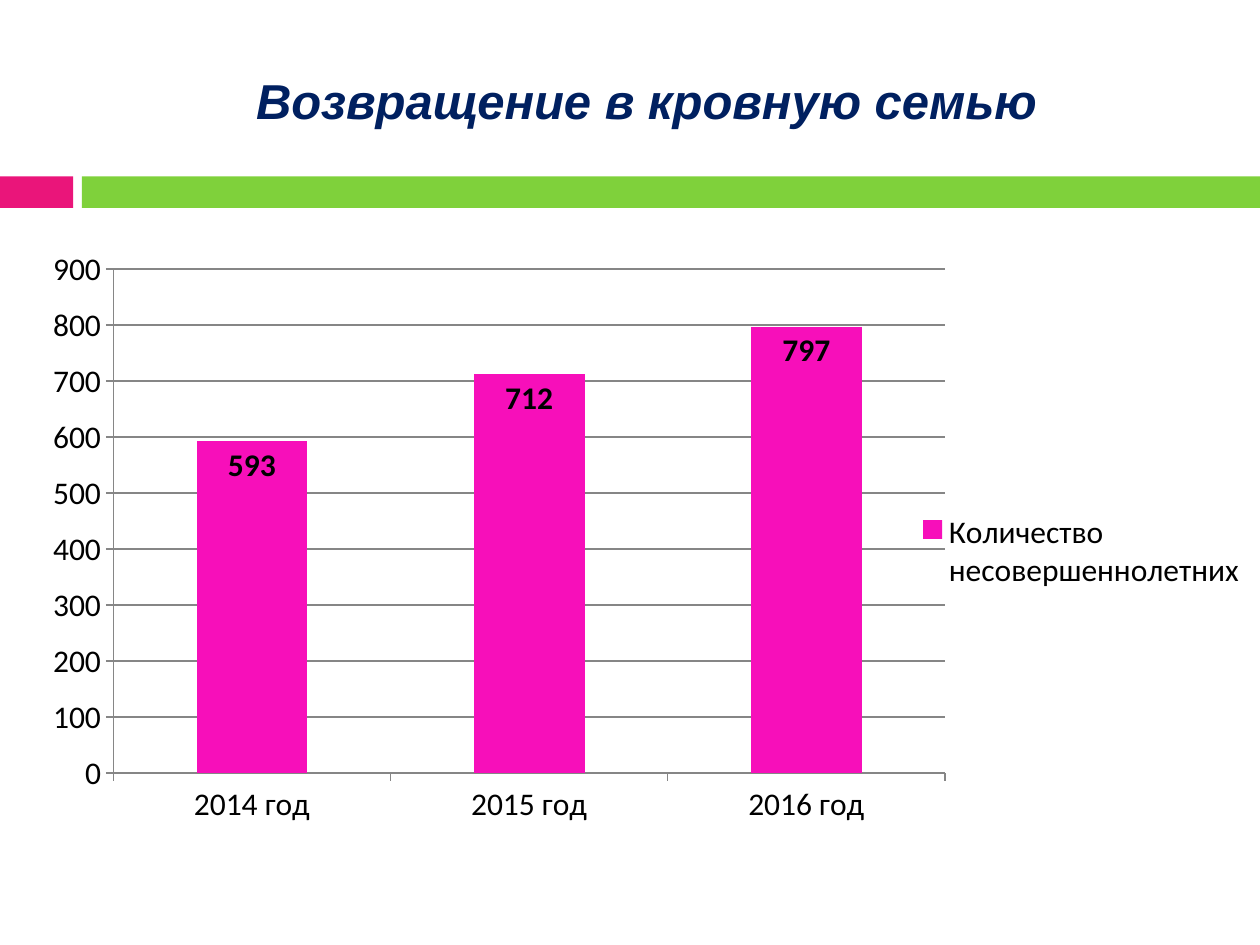
from lxml import etree
from pptx import Presentation
from pptx import util as u
from pptx.chart.data import CategoryChartData
from pptx.dml.color import RGBColor
from pptx.enum import chart as charts, shapes, text
from pptx.oxml.ns import qn

TITLE = "Возвращение в кровную семью"
SERIES = "Количество несовершеннолетних"
CHILDREN = {"2014 год": 593, "2015 год": 712, "2016 год": 797}
BANDS = [(0, 0.58, "EA157A"), (0.65, 9.35, "7FD13B")]
PLOT_AREA = {"x": 0.09, "y": 0.04, "w": 0.66, "h": 0.82}
GREY = "868686"


def paint(color_format, color):
    color_format.rgb = RGBColor.from_string(color)


def style_font(font, name, size, color, bold=False, italic=False):
    font.name, font.size = name, u.Pt(size)
    font.bold, font.italic = bold, italic
    paint(font.color, color)


def style_line(line, color):
    paint(line.color, color)
    line.width = u.Pt(0.75)


def add_band(slide, left, width, color):
    band = slide.shapes.add_shape(
        shapes.MSO_SHAPE.RECTANGLE,
        u.Inches(left), u.Inches(1.4), u.Inches(width), u.Inches(0.25))
    band.shadow.inherit = False
    band.fill.solid()
    paint(band.fill.fore_color, color)
    band.line.fill.background()


def add_title(slide):
    title = slide.shapes.title
    title.left, title.top = u.Inches(0.67), u.Inches(0.25)
    title.width, title.height = u.Inches(8.92), u.Inches(1.08)
    title.text_frame.text = TITLE
    title.text_frame.vertical_anchor = text.MSO_ANCHOR.MIDDLE
    paragraph = title.text_frame.paragraphs[0]
    paragraph.alignment = text.PP_ALIGN.CENTER
    style_font(paragraph.font, "Arial", 28, "002060", bold=True, italic=True)


def place_plot(chart, area):
    plot_area = chart.plots[0]._element.getparent()
    for old in plot_area.findall(qn("c:layout")):
        plot_area.remove(old)
    layout = etree.Element(qn("c:layout"))
    manual = etree.SubElement(layout, qn("c:manualLayout"))
    settings = {"layoutTarget": "inner", "xMode": "edge", "yMode": "edge", **area}
    for tag, value in settings.items():
        etree.SubElement(manual, qn(f"c:{tag}")).set("val", str(value))
    plot_area.insert(0, layout)


def add_column_chart(slide):
    data = CategoryChartData()
    data.categories = list(CHILDREN)
    data.add_series(SERIES, list(CHILDREN.values()))
    chart = slide.shapes.add_chart(
        charts.XL_CHART_TYPE.COLUMN_CLUSTERED,
        u.Inches(0), u.Inches(1.94), u.Inches(10), u.Inches(4.88), data).chart
    style_font(chart.font, "Calibri", 18, "000000")
    chart.has_title = False
    chart.has_legend = True
    chart.legend.position = charts.XL_LEGEND_POSITION.RIGHT
    chart.legend.include_in_layout = False

    for axis in (chart.category_axis, chart.value_axis):
        axis.major_tick_mark = charts.XL_TICK_MARK.OUTSIDE
        style_line(axis.format.line, GREY)
    value_axis = chart.value_axis
    value_axis.minimum_scale, value_axis.maximum_scale = 0, 900
    value_axis.major_unit = 100
    style_line(value_axis.major_gridlines.format.line, GREY)

    plot = chart.plots[0]
    plot.gap_width = 150
    plot.vary_by_categories = False
    series = plot.series[0]
    series.format.fill.solid()
    paint(series.format.fill.fore_color, "F70FBA")
    labels = series.data_labels
    labels.show_value = True
    labels.position = charts.XL_LABEL_POSITION.INSIDE_END
    style_font(labels.font, "Calibri", 18, "000000", bold=True)
    place_plot(chart, PLOT_AREA)


def main():
    presentation = Presentation()
    presentation.slide_width = u.Inches(10)
    presentation.slide_height = u.Inches(7.5)
    slide = presentation.slides.add_slide(presentation.slide_layouts[5])
    for band in BANDS:
        add_band(slide, *band)
    add_title(slide)
    add_column_chart(slide)
    presentation.save("out.pptx")


if __name__ == "__main__":
    main()
